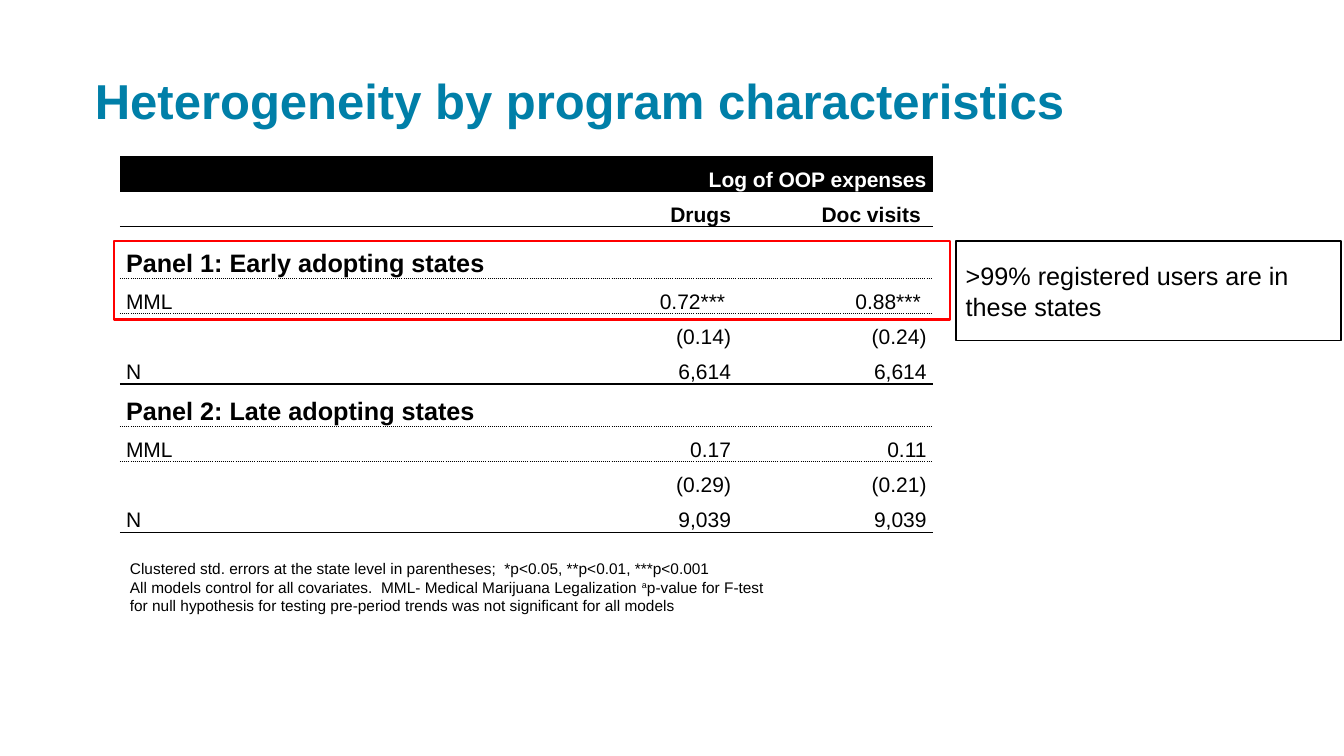
"""Build the slide on heterogeneity by program characteristics."""
from lxml import etree
from pptx import Presentation
from pptx.dml.color import RGBColor
from pptx.enum.shapes import MSO_SHAPE
from pptx.enum.text import MSO_ANCHOR, PP_ALIGN
from pptx.oxml.ns import qn
from pptx.util import Inches, Pt

LEFT, RIGHT = PP_ALIGN.LEFT, PP_ALIGN.RIGHT
MIDDLE, BOTTOM, TOP = MSO_ANCHOR.MIDDLE, MSO_ANCHOR.BOTTOM, MSO_ANCHOR.TOP
RECTANGLE = MSO_SHAPE.RECTANGLE
NO_GRID_STYLE = "{2D5ABB26-0587-4C30-8999-92F81FD0307C}"
BLACK, WHITE, RED, TEAL = "000000", "FFFFFF", "FF0000", "007FA8"

TITLE = "Heterogeneity by program characteristics"
ROWS = [
    ("header", "", "", "Log of OOP expenses", ""),
    ("labels", "", "", "Drugs", "Doc visits "),
    ("panel", "Panel 1: Early adopting states", "", "", ""),
    ("body", "MML", "", "0.72*** ", "0.88*** "),
    ("body", "", "", "(0.14)", "(0.24)"),
    ("last", "N", "", "6,614", "6,614"),
    ("panel", "Panel 2: Late adopting states", "", "", ""),
    ("body", "MML", "", "0.17", "0.11"),
    ("body", "", "", "(0.29)", "(0.21)"),
    ("last", "N", "", "9,039", "9,039"),
]
MERGED = {"header": (2, 3), "panel": (0, 1)}
RULES = {"labels": "solid", "panel": "sysDot", "last": "solid"}
COLUMN_WIDTHS = [2.31, 2.28, 1.53, 1.94]
ROW_HEIGHT = 0.35
TALL_ROWS = {2: 0.51, 6: 0.42}
TABLE_LEFT, TABLE_TOP = 1.19, 1.55
CALLOUT = ">99% registered users are in these states"
NOTES = [
    [("Clustered std. errors at the state level in parentheses;  "
      "*p<0.05, **p<0.01, ***p<0.001", 0)],
    [("All models control for all covariates.  "
      "MML- Medical Marijuana Legalization ", 0),
     ("a", 30000),
     ("p-value for F-test for null hypothesis for testing pre-period "
      "trends was not significant for all models", 0)],
]


def color(value):
    return RGBColor.from_string(value)


def add_text(para, text, size=15, fill=BLACK, bold=False, align=LEFT, baseline=0):
    para.alignment = align
    span = para.add_run()
    span.text = text
    span.font.name = "Arial"
    span.font.size = Pt(size)
    span.font.bold = bold
    span.font.color.rgb = color(fill)
    if baseline:
        span.font._element.set("baseline", str(baseline))


def add_rule(cell, side, dash):
    line = etree.Element(qn(f"a:{side}"), w=str(Pt(1)))
    fill = etree.SubElement(line, qn("a:solidFill"))
    etree.SubElement(fill, qn("a:srgbClr"), val=BLACK)
    etree.SubElement(line, qn("a:prstDash"), val=dash)
    cell._tc.get_or_add_tcPr().insert(0, line)


def add_box(page, place, line, width, fill=None):
    box = page.shapes.add_shape(RECTANGLE, *map(Inches, place))
    box.shadow.inherit = False
    box.line.color.rgb = color(line)
    box.line.width = Pt(width)
    if fill:
        box.fill.solid()
        box.fill.fore_color.rgb = color(fill)
    else:
        box.fill.background()
    return box


def add_results(page):
    heights = [TALL_ROWS.get(index, ROW_HEIGHT) for index in range(len(ROWS))]
    place = (TABLE_LEFT, TABLE_TOP, sum(COLUMN_WIDTHS), sum(heights))
    table = page.shapes.add_table(
        len(ROWS), len(COLUMN_WIDTHS), *map(Inches, place)).table
    table.first_row = table.horz_banding = False
    table._tbl.tblPr.find(qn("a:tableStyleId")).text = NO_GRID_STYLE
    for column, width in zip(table.columns, COLUMN_WIDTHS):
        column.width = Inches(width)
    for index, (kind, *texts) in enumerate(ROWS):
        table.rows[index].height = Inches(heights[index])
        for number, text in enumerate(texts):
            cell = table.cell(index, number)
            cell.margin_left = cell.margin_right = Inches(0.06)
            cell.margin_top = cell.margin_bottom = 0
            cell.vertical_anchor = BOTTOM
            if kind == "header":
                cell.fill.solid()
                cell.fill.fore_color.rgb = color(BLACK)
            else:
                cell.fill.background()
            if kind in RULES:
                add_rule(cell, "lnB", RULES[kind])
            if index and ROWS[index - 1][0] in RULES:
                add_rule(cell, "lnT", RULES[ROWS[index - 1][0]])
            if text:
                add_text(cell.text_frame.paragraphs[0], text,
                         size=18 if kind == "panel" else 15,
                         fill=WHITE if kind == "header" else BLACK,
                         bold=kind in ("header", "labels", "panel"),
                         align=RIGHT if number > 1 else LEFT)
        if kind in MERGED:
            first, last = MERGED[kind]
            table.cell(index, first).merge(table.cell(index, last))


def main():
    deck = Presentation()
    deck.slide_width, deck.slide_height = Inches(13.33), Inches(7.5)
    page = deck.slides.add_slide(deck.slide_layouts[5])

    title = page.shapes.title
    title.left, title.top, title.width, title.height = map(
        Inches, (0.84, 0.4, 11.77, 1.26))
    title.text_frame.vertical_anchor = MIDDLE
    heading = title.text_frame.paragraphs[0]
    heading.line_spacing = 0.9
    add_text(heading, TITLE, size=35, fill=TEAL, bold=True)

    add_results(page)

    notes = page.shapes.add_textbox(
        *map(Inches, (TABLE_LEFT, 5.5, 6.67, 0.66))).text_frame
    notes.word_wrap = True
    notes.vertical_anchor = TOP
    for index, spans in enumerate(NOTES):
        para = notes.add_paragraph() if index else notes.paragraphs[0]
        for text, baseline in spans:
            add_text(para, text, size=11, baseline=baseline)

    callout = add_box(page, (9.48, 2.39, 3.82, 0.99), BLACK, 1, WHITE)
    callout.text_frame.word_wrap = True
    callout.text_frame.vertical_anchor = MIDDLE
    add_text(callout.text_frame.paragraphs[0], CALLOUT, size=18)
    add_box(page, (1.13, 2.39, 8.29, 0.78), RED, 1.5)

    deck.save("out.pptx")


if __name__ == "__main__":
    main()
